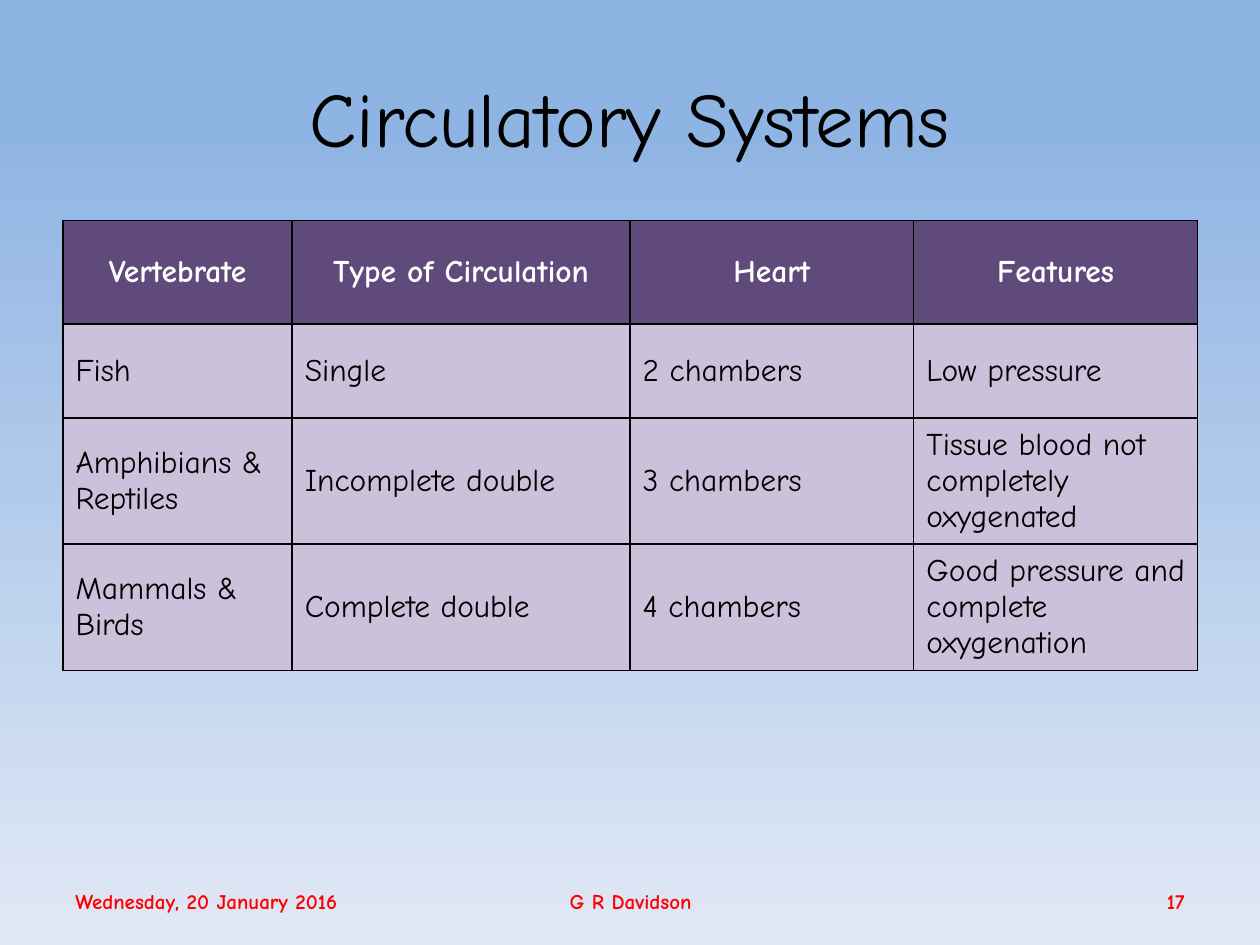
from lxml import etree
from pptx import Presentation
from pptx.dml.color import RGBColor
from pptx.enum.text import MSO_ANCHOR, PP_ALIGN
from pptx.oxml.ns import qn
from pptx.util import Cm, Pt

LEFT, CENTER, RIGHT = PP_ALIGN.LEFT, PP_ALIGN.CENTER, PP_ALIGN.RIGHT
MIDDLE = MSO_ANCHOR.MIDDLE

COLORS = {
    "sky": "8EB4E3",
    "haze": "E1E8F5",
    "header": "604A7B",
    "body": "CCC1DA",
    "ink": "000000",
    "header_text": "FFFFFF",
    "footer": "FF0000",
}
MARGIN, CONTENT_WIDTH = 1.27, 22.86
COLUMN_WIDTHS = [4.62, 6.81, 5.72, 5.72]
ROW_HEIGHTS = [2.08, 1.9, 2.45, 2.45]
SYSTEMS = [
    ["Vertebrate", "Type of Circulation", "Heart", "Features"],
    ["Fish", "Single", "2 chambers", "Low pressure"],
    ["Amphibians & Reptiles", "Incomplete double", "3 chambers",
     "Tissue blood not completely oxygenated"],
    ["Mammals & Birds", "Complete double", "4 chambers",
     "Good pressure and complete oxygenation"],
]
FOOTERS = [
    ("Wednesday, 20 January 2016", 1.27, 8.43, LEFT),
    ("G R Davidson", 8.69, 8.05, CENTER),
    ("17", 18.21, 5.92, RIGHT),
]


class SlideBuilder:
    """Draws styled elements on the current slide."""

    font_name = "Comic Neue"

    def __init__(self, slide):
        self.slide = slide

    def color(self, name):
        return RGBColor.from_string(COLORS[name])

    def background(self, stops):
        fill = self.slide.background.fill
        fill.gradient()
        fill.gradient_angle = 270
        for stop, (position, name) in zip(fill.gradient_stops, stops):
            stop.position = position
            stop.color.rgb = self.color(name)

    def set_text(self, frame, wording, size, color, align, bold):
        paragraph = frame.paragraphs[0]
        paragraph.text = wording
        paragraph.alignment = align
        font = paragraph.font
        font.name, font.size, font.bold = self.font_name, Pt(size), bold
        font.color.rgb = self.color(color)

    def text(self, wording, left, top, width, height, size, color,
             align=CENTER, bold=False):
        box = self.slide.shapes.add_textbox(Cm(left), Cm(top), Cm(width), Cm(height))
        frame = box.text_frame
        frame.word_wrap = True
        frame.vertical_anchor = MIDDLE
        self.set_text(frame, wording, size, color, align, bold)

    def border(self, cell):
        properties = cell._tc.get_or_add_tcPr()
        for side in ("a:lnL", "a:lnR", "a:lnT", "a:lnB"):
            line = etree.SubElement(properties, qn(side), w=str(Pt(1)))
            fill = etree.SubElement(line, qn("a:solidFill"))
            etree.SubElement(fill, qn("a:srgbClr"), val=COLORS["ink"])

    def table(self, rows, left, top, widths, heights):
        table = self.slide.shapes.add_table(
            len(rows), len(widths), Cm(left), Cm(top),
            Cm(sum(widths)), Cm(sum(heights))).table
        for column, width in zip(table.columns, widths):
            column.width = Cm(width)
        for row, height in zip(table.rows, heights):
            row.height = Cm(height)
        for r, row in enumerate(rows):
            is_header = r == 0
            for c, wording in enumerate(row):
                cell = table.cell(r, c)
                self.border(cell)
                cell.fill.solid()
                cell.fill.fore_color.rgb = self.color("header" if is_header else "body")
                cell.vertical_anchor = MIDDLE
                self.set_text(cell.text_frame, wording, 18,
                              "header_text" if is_header else "ink",
                              CENTER if is_header else LEFT, is_header)


def main():
    presentation = Presentation()
    presentation.slide_width, presentation.slide_height = Cm(25.4), Cm(19.05)
    builder = SlideBuilder(presentation.slides.add_slide(presentation.slide_layouts[6]))
    builder.background([(0.13, "sky"), (1.0, "haze")])
    builder.text("Circulatory Systems", MARGIN, 0.76, CONTENT_WIDTH, 3.18, 44, "ink")
    builder.table(SYSTEMS, MARGIN, 4.45, COLUMN_WIDTHS, ROW_HEIGHTS)
    for wording, left, width, align in FOOTERS:
        builder.text(wording, left, 17.65, width, 1.02, 12, "footer", align, True)
    presentation.save("out.pptx")


if __name__ == "__main__":
    main()
